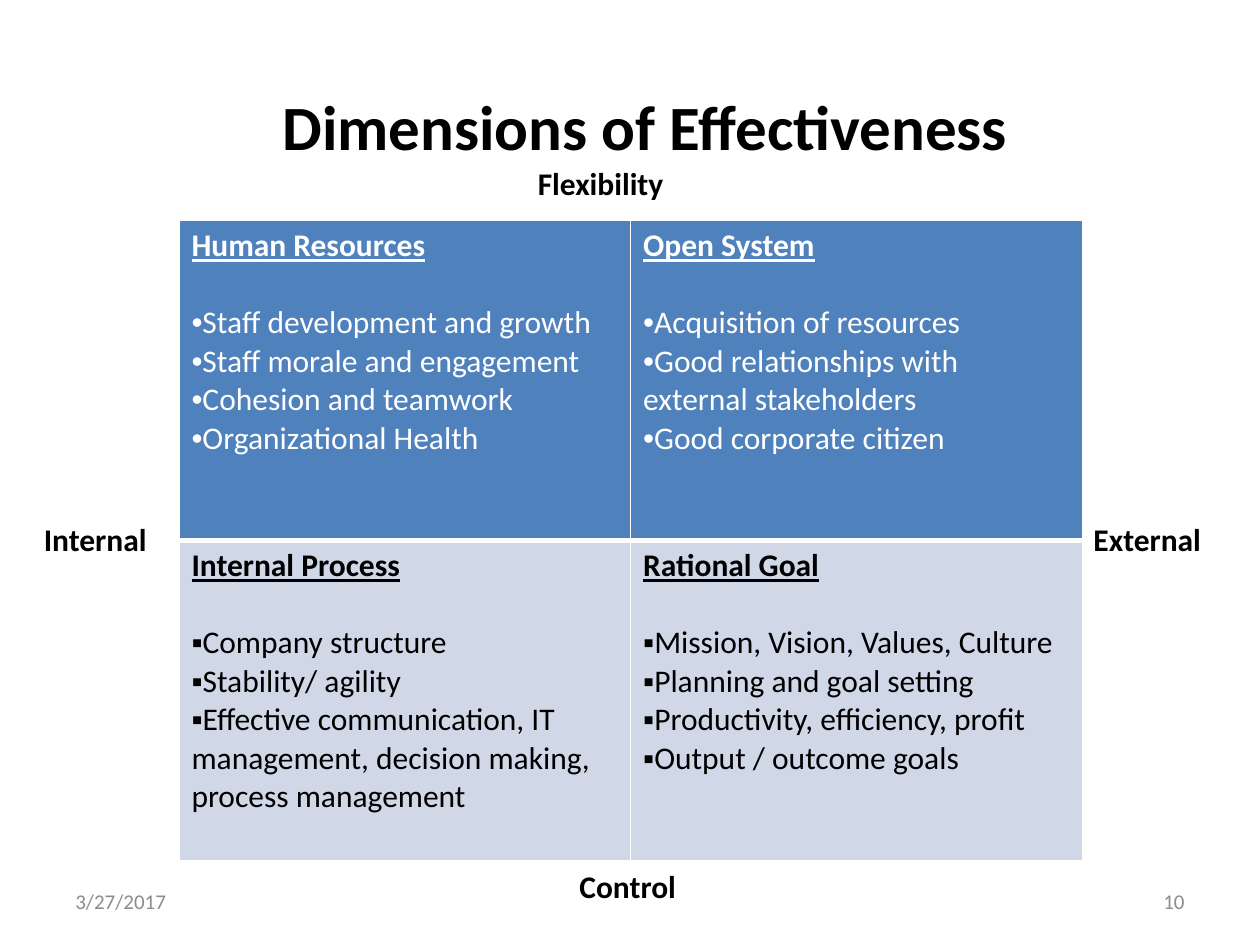
from lxml import etree
from pptx import Presentation
from pptx.dml.color import RGBColor
from pptx.enum import text
from pptx.oxml import ns
from pptx.util import Inches, Pt

BLACK, WHITE, GREY = "000000", "FFFFFF", "8C8C8C"
BLUE, PALE_BLUE = "4F81BD", "D0D8E8"
LEFT, CENTER, RIGHT = text.PP_ALIGN.LEFT, text.PP_ALIGN.CENTER, text.PP_ALIGN.RIGHT
TOP, MIDDLE = text.MSO_ANCHOR.TOP, text.MSO_ANCHOR.MIDDLE

QUADRANTS = [
    [
        ("Human Resources", ["Staff development and growth", "Staff morale and engagement",
                             "Cohesion and teamwork", "Organizational Health"]),
        ("Open System", ["Acquisition of resources",
                         "Good relationships with external stakeholders",
                         "Good corporate citizen"]),
    ],
    [
        ("Internal Process", ["Company structure", "Stability/ agility",
                              "Effective communication, IT management, decision making, "
                              "process management"]),
        ("Rational Goal", ["Mission, Vision, Values, Culture", "Planning and goal setting",
                           "Productivity, efficiency, profit", "Output / outcome goals"]),
    ],
]
ROW_STYLES = [(BLUE, WHITE, "•"), (PALE_BLUE, BLACK, "▪")]
AXIS_LABELS = [
    ("Flexibility", 4.17, 1.25, 1.5),
    ("Control", 4.5, 6.83, 1.25),
    ("Internal", 0.25, 4.08, 1.17),
    ("External", 8.58, 4.08, 1.42),
]


def rgb(color):
    return RGBColor.from_string(color)


def add_run(paragraph, words, size, color, bold=False, underline=False):
    run = paragraph.add_run()
    run.text = words
    font = run.font
    font.name, font.size = "Calibri", Pt(size)
    font.bold, font.underline = bold, underline
    font.color.rgb = rgb(color)


def add_label(slide, words, left, top, width, height=0.4, size=18, color=BLACK,
              bold=True, align=LEFT, anchor=TOP):
    box = slide.shapes.add_textbox(Inches(left), Inches(top), Inches(width), Inches(height))
    frame = box.text_frame
    frame.word_wrap = True
    frame.vertical_anchor = anchor
    paragraph = frame.paragraphs[0]
    paragraph.alignment = align
    add_run(paragraph, words, size, color, bold)


def add_bullet(paragraph, character):
    properties = paragraph._p.get_or_add_pPr()
    properties.set("marL", "0")
    properties.set("indent", "0")
    etree.SubElement(properties, ns.qn("a:buFont")).set("typeface", "Arial")
    etree.SubElement(properties, ns.qn("a:buChar")).set("char", character)


def set_borders(cell, **widths):
    """Draw white edges; widths in points are keyed by L, R, T and B, in that order."""
    properties = cell._tc.get_or_add_tcPr()
    for index, (side, width) in enumerate(widths.items()):
        line = etree.Element(ns.qn(f"a:ln{side}"), w=str(Pt(width)))
        fill = etree.SubElement(line, ns.qn("a:solidFill"))
        etree.SubElement(fill, ns.qn("a:srgbClr")).set("val", WHITE)
        properties.insert(index, line)


def fill_quadrant(cell, heading, items, fill, color, bullet):
    cell.fill.solid()
    cell.fill.fore_color.rgb = rgb(fill)
    frame = cell.text_frame
    paragraph = frame.paragraphs[0]
    paragraph.space_after = Pt(22)
    add_run(paragraph, heading, 18, color, bold=True, underline=True)
    for item in items:
        paragraph = frame.add_paragraph()
        add_bullet(paragraph, bullet)
        add_run(paragraph, item, 18, color)


def add_quadrants(slide):
    frame = slide.shapes.add_table(2, 2, Inches(1.42), Inches(1.75), Inches(7.17), Inches(5.08))
    table = frame.table
    table.first_row = table.horz_banding = False
    for row, (quadrants, style) in enumerate(zip(QUADRANTS, ROW_STYLES)):
        for column, (heading, items) in enumerate(quadrants):
            cell = table.cell(row, column)
            fill_quadrant(cell, heading, items, *style)
            set_borders(cell, L=1, R=1, T=3 if row == 1 else 1, B=3 if row == 0 else 1)


def main():
    presentation = Presentation()
    presentation.slide_width, presentation.slide_height = Inches(10), Inches(7.5)
    slide = presentation.slides.add_slide(presentation.slide_layouts[6])
    add_label(slide, "Dimensions of Effectiveness", 0.62, 0.37, 9, 1.25, size=36,
              align=CENTER, anchor=MIDDLE)
    add_quadrants(slide)
    for label in AXIS_LABELS:
        add_label(slide, *label)
    for words, left, align in [("3/27/2017", 0.5, LEFT), ("10", 7.17, RIGHT)]:
        add_label(slide, words, left, 6.95, 2.33, size=12, color=GREY, bold=False,
                  align=align, anchor=MIDDLE)
    presentation.save("out.pptx")


if __name__ == "__main__":
    main()
